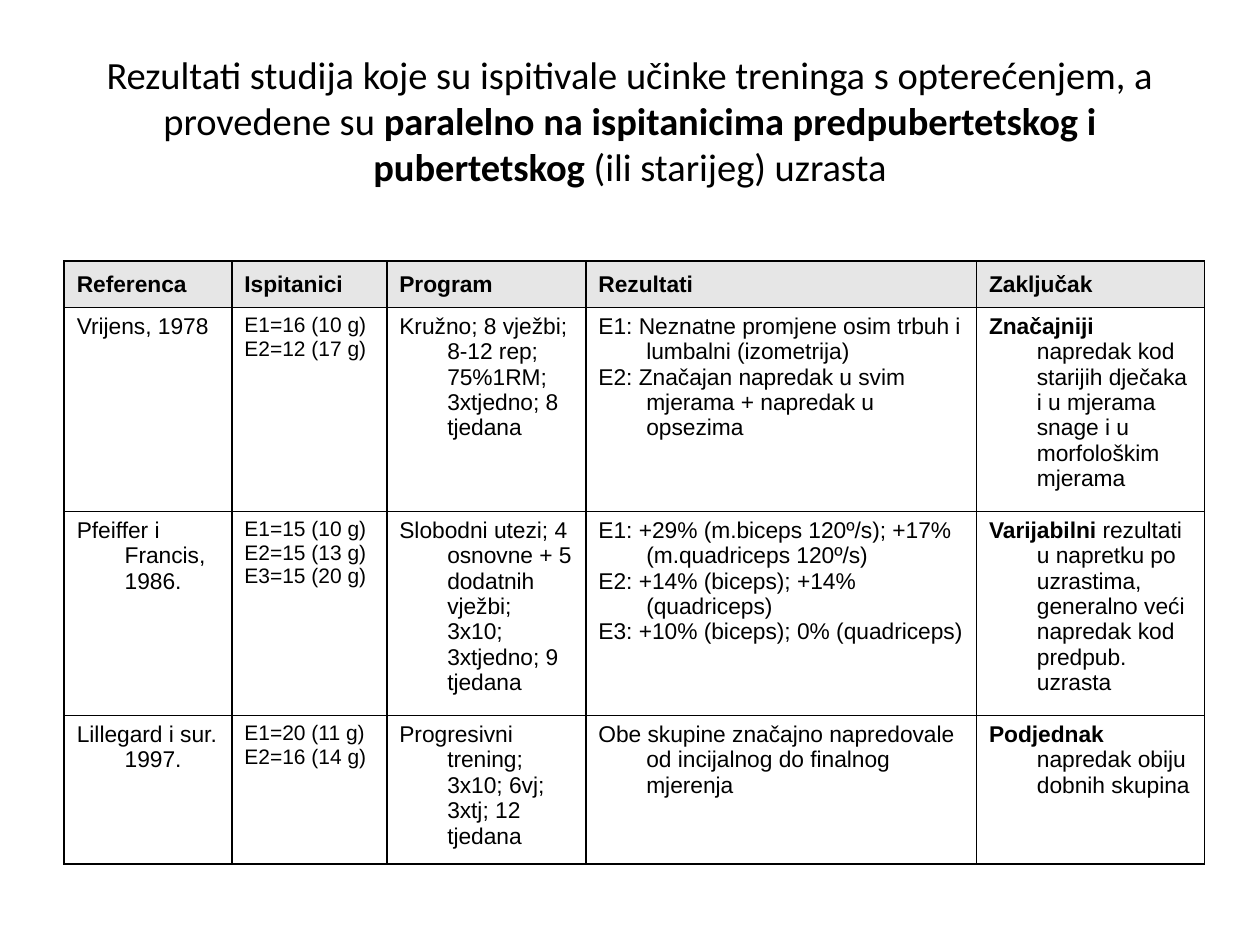
from pptx import Presentation
from pptx.dml.color import RGBColor
from pptx.enum.text import MSO_ANCHOR as Anchor, PP_ALIGN as Align
from pptx.oxml import parse_xml
from pptx.oxml.ns import nsdecls
from pptx.util import Inches, Pt

BLACK = RGBColor(0x00, 0x00, 0x00)
GREY = RGBColor(0xE6, 0xE6, 0xE6)

TITLE = [
    ("Rezultati studija koje su ispitivale učinke treninga s opterećenjem, a provedene su ", False),
    ("paralelno na ispitanicima predpubertetskog i pubertetskog", True),
    (" (ili starijeg) uzrasta", False),
]
HEADS = ["Referenca", "Ispitanici", "Program", "Rezultati", "Zaključak"]
STUDIES = [
    (
        ["Vrijens, 1978"],
        ["E1=16 (10 g)", "E2=12 (17 g)"],
        ["Kružno; 8 vježbi; 8-12 rep; 75%1RM; 3xtjedno; 8 tjedana"],
        ["E1: Neznatne promjene osim trbuh i lumbalni (izometrija)",
         "E2: Značajan napredak u svim mjerama + napredak u opsezima"],
        ("Značajniji", " napredak kod starijih dječaka i u mjerama snage i u morfološkim mjerama"),
    ),
    (
        ["Pfeiffer i Francis, 1986."],
        ["E1=15 (10 g)", "E2=15 (13 g)", "E3=15 (20 g)"],
        ["Slobodni utezi; 4 osnovne + 5 dodatnih vježbi; 3x10; 3xtjedno; 9 tjedana"],
        ["E1: +29% (m.biceps 120º/s); +17% (m.quadriceps 120º/s)",
         "E2: +14% (biceps); +14% (quadriceps)",
         "E3: +10% (biceps); 0% (quadriceps)"],
        ("Varijabilni",
         " rezultati u napretku po uzrastima, generalno veći napredak kod predpub. uzrasta"),
    ),
    (
        ["Lillegard i sur. 1997."],
        ["E1=20 (11 g)", "E2=16 (14 g)"],
        ["Progresivni trening; 3x10; 6vj; 3xtj; 12 tjedana"],
        ["Obe skupine značajno napredovale od incijalnog do finalnog mjerenja"],
        ("Podjednak", " napredak obiju dobnih skupina"),
    ),
]
COLS = [1.33, 1.23, 1.58, 3.1, 1.81]
ROWS = [0.37, 1.62, 1.62, 1.18]
SIZES = [13, 12, 13, 13, 13]
LEFT, TOP, INDENT = 0.51, 2.07, 0.38


def write(para, runs, font, size):
    for text, bold in runs:
        run = para.add_run()
        run.text = text
        run.font.name = font
        run.font.size = Pt(size)
        run.font.bold = bold
        run.font.color.rgb = BLACK


def border(cell):
    props = cell._tc.get_or_add_tcPr()
    for spot, side in enumerate(("lnL", "lnR", "lnT", "lnB")):
        line = parse_xml(
            f'<a:{side} {nsdecls("a")} w="{Pt(1)}"><a:solidFill>'
            f'<a:srgbClr val="{BLACK}"/></a:solidFill></a:{side}>'
        )
        props.insert(spot, line)


def fill_cell(cell, paras, size):
    frame = cell.text_frame
    for num, runs in enumerate(paras):
        para = frame.add_paragraph() if num else frame.paragraphs[0]
        props = para._p.get_or_add_pPr()
        props.set("marL", str(Inches(INDENT)))
        props.set("indent", str(-Inches(INDENT)))
        write(para, runs, "Arial", size)
    border(cell)


def add_title(slide):
    title = slide.shapes.title
    title.left, title.top = Inches(LEFT), Inches(0.33)
    title.width, title.height = Inches(8.98), Inches(1.25)
    frame = title.text_frame
    frame.word_wrap = True
    frame.vertical_anchor = Anchor.MIDDLE
    para = frame.paragraphs[0]
    para.alignment = Align.CENTER
    write(para, TITLE, "Calibri", 22)


def add_grid(slide):
    table = slide.shapes.add_table(
        len(ROWS), len(COLS), Inches(LEFT), Inches(TOP),
        Inches(sum(COLS)), Inches(sum(ROWS)),
    ).table
    table.horz_banding = False
    for col, width in zip(table.columns, COLS):
        col.width = Inches(width)
    for row, height in zip(table.rows, ROWS):
        row.height = Inches(height)

    for col, head in enumerate(HEADS):
        cell = table.cell(0, col)
        cell.vertical_anchor = Anchor.MIDDLE
        cell.fill.solid()
        cell.fill.fore_color.rgb = GREY
        fill_cell(cell, [[(head, True)]], 13)

    for row, study in enumerate(STUDIES, 1):
        *plain, (lead, rest) = study
        paras = [[[(text, False)] for text in texts] for texts in plain]
        paras.append([[(lead, True), (rest, False)]])
        for col, (lines, size) in enumerate(zip(paras, SIZES)):
            cell = table.cell(row, col)
            cell.fill.background()
            fill_cell(cell, lines, size)


def main():
    deck = Presentation()
    deck.slide_width, deck.slide_height = Inches(10), Inches(7.5)
    slide = deck.slides.add_slide(deck.slide_layouts[5])
    add_grid(slide)
    add_title(slide)
    deck.save("out.pptx")


if __name__ == "__main__":
    main()
